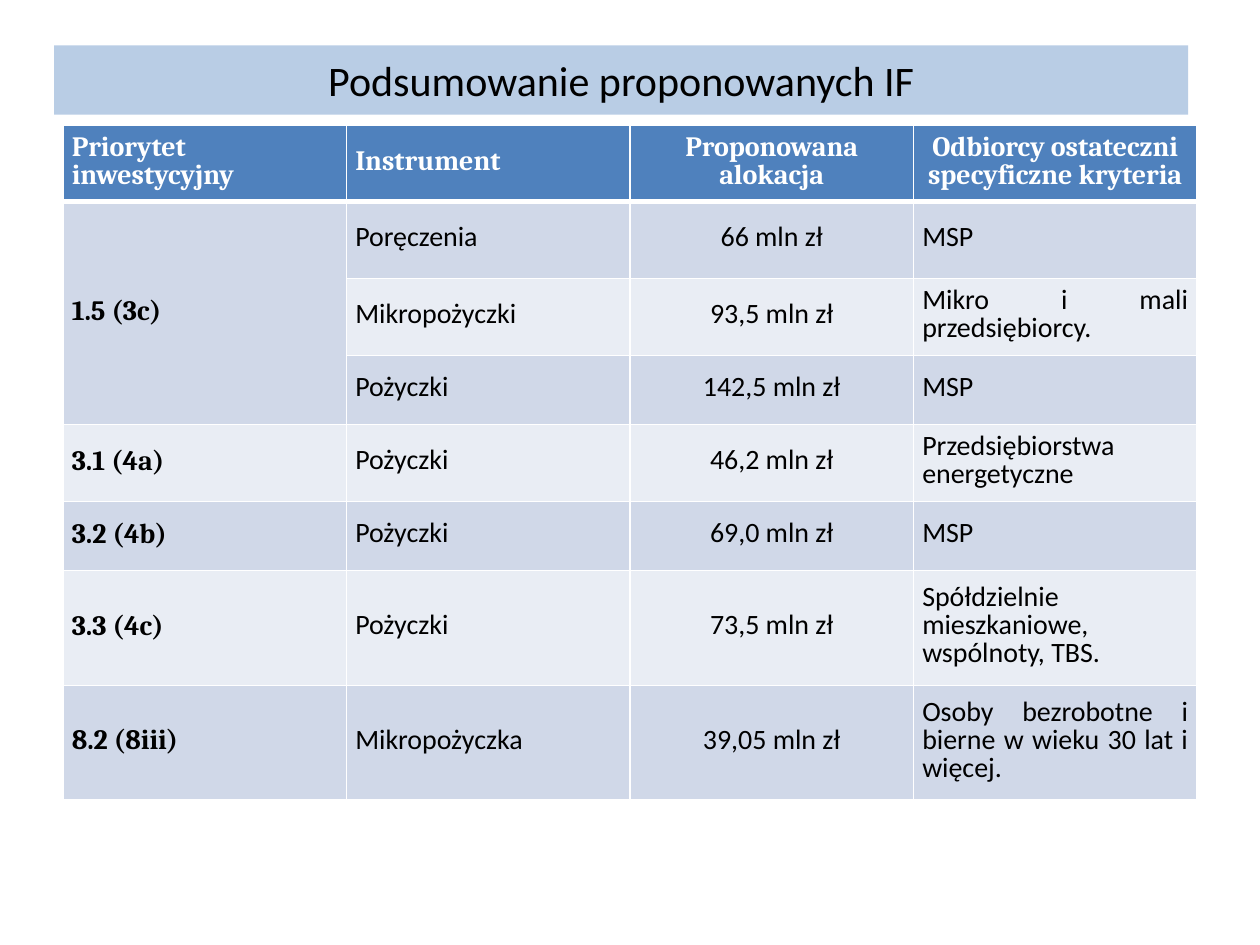
from dataclasses import dataclass

from lxml.etree import SubElement as Sub
from pptx import Presentation
from pptx.dml.color import RGBColor as Rgb
from pptx.enum.text import MSO_ANCHOR as Anchor, PP_ALIGN as Align
from pptx.oxml.ns import qn
from pptx.util import Inches, Pt

INK = {
    "band": "B9CDE5",
    "head": "4F81BD",
    "odd": "D0D8E8",
    "even": "E9EDF4",
    "white": "FFFFFF",
    "black": "000000",
}
EDGES = {"lnL": 1, "lnR": 1, "lnT": 1, "lnB": 3}
COLS = (Align.JUSTIFY, Align.JUSTIFY, Align.CENTER, Align.JUSTIFY)


@dataclass
class Row:
    high: float
    texts: tuple
    last: Align = Align.JUSTIFY


ROWS = [
    Row(0.61, ("Priorytet inwestycyjny", "Instrument", "Proponowana alokacja",
               "Odbiorcy ostateczni specyficzne kryteria"), Align.CENTER),
    Row(0.61, ("1.5 (3c)", "Poręczenia", "66 mln zł", "MSP")),
    Row(0.61, ("", "Mikropożyczki", "93,5 mln zł", "Mikro i mali przedsiębiorcy.")),
    Row(0.55, ("", "Pożyczki", "142,5 mln zł", "MSP")),
    Row(0.61, ("3.1 (4a)", "Pożyczki", "46,2 mln zł", "Przedsiębiorstwa energetyczne")),
    Row(0.55, ("3.2 (4b)", "Pożyczki", "69,0 mln zł", "MSP")),
    Row(0.91, ("3.3 (4c)", "Pożyczki", "73,5 mln zł",
               "Spółdzielnie mieszkaniowe, wspólnoty, TBS."), Align.LEFT),
    Row(0.91, ("8.2 (8iii)", "Mikropożyczka", "39,05 mln zł",
               "Osoby bezrobotne i bierne w wieku 30 lat i więcej.")),
]


def paint(part, tone: str) -> None:
    part.fill.solid()
    part.fill.fore_color.rgb = Rgb.from_string(INK[tone])


def write(para, text: str, size: int, face: str, tone: str, bold: bool) -> None:
    run = para.add_run()
    run.text = text
    font = run.font
    font.size, font.name, font.bold = Pt(size), face, bold
    font.color.rgb = Rgb.from_string(INK[tone])


def edge(cell) -> None:
    props = cell._tc.get_or_add_tcPr()
    for side, width in EDGES.items():
        line = Sub(props, qn(f"a:{side}"), w=str(Pt(width)))
        Sub(Sub(line, qn("a:solidFill")), qn("a:srgbClr"), val=INK["white"])


def draw_cell(cell, text: str, align: Align, top: bool, first: bool, tone: str) -> None:
    if top:
        edge(cell)
    paint(cell, tone)
    cell.vertical_anchor = Anchor.MIDDLE
    cell.margin_left = cell.margin_right = Inches(0.07)
    cell.margin_top = cell.margin_bottom = 0
    if not text:
        return
    para = cell.text_frame.paragraphs[0]
    para.alignment = align
    para.line_spacing = Pt(16)
    para.space_after = Pt(3)
    strong = top or first
    write(para, text, 16, "Cambria" if strong else "Calibri",
          "white" if top else "black", strong)


def draw_title(shape) -> None:
    shape.left, shape.top = Inches(0.43), Inches(0.36)
    shape.width, shape.height = Inches(9), Inches(0.55)
    paint(shape, "band")
    frame = shape.text_frame
    frame.vertical_anchor = Anchor.MIDDLE
    para = frame.paragraphs[0]
    para.alignment = Align.CENTER
    write(para, "Podsumowanie proponowanych IF", 24, "Calibri", "black", False)


def draw_table(slide) -> None:
    total = sum(row.high for row in ROWS)
    table = slide.shapes.add_table(len(ROWS), len(COLS), Inches(0.5), Inches(0.99),
                                   Inches(9), Inches(total)).table
    for r, row in enumerate(ROWS):
        table.rows[r].height = Inches(row.high)
        tone = "head" if r == 0 else "odd" if r % 2 else "even"
        for c, align in enumerate((*COLS[:-1], row.last)):
            draw_cell(table.cell(r, c), row.texts[c], align, r == 0, c == 0, tone)
    table.cell(1, 0).merge(table.cell(3, 0))


def main() -> None:
    deck = Presentation()
    deck.slide_width, deck.slide_height = Inches(10), Inches(7.5)
    slide = deck.slides.add_slide(deck.slide_layouts[5])
    draw_title(slide.shapes.title)
    draw_table(slide)
    deck.save("out.pptx")


if __name__ == "__main__":
    main()
